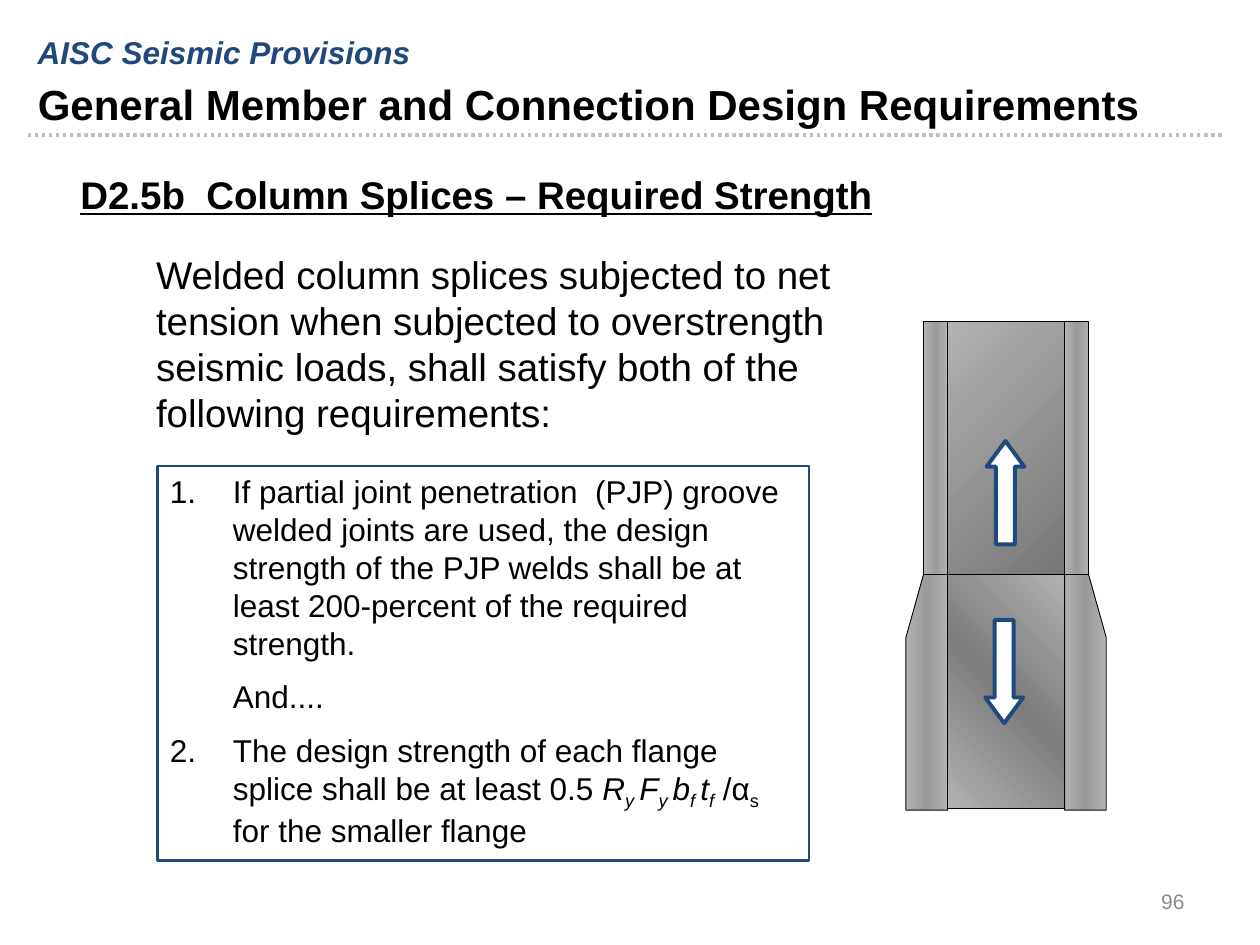
from lxml import etree
from pptx import Presentation
from pptx.dml.color import RGBColor
from pptx.enum.dml import MSO_LINE
from pptx.enum.shapes import MSO_CONNECTOR, MSO_SHAPE
from pptx.enum.text import MSO_ANCHOR, PP_ALIGN
from pptx.oxml.ns import qn
from pptx.util import Inches, Pt

LEFT, RIGHT = PP_ALIGN.LEFT, PP_ALIGN.RIGHT
TOP, MIDDLE = MSO_ANCHOR.TOP, MSO_ANCHOR.MIDDLE
RECT, ARROW = MSO_SHAPE.RECTANGLE, MSO_SHAPE.UP_ARROW
STRAIGHT, DOTS = MSO_CONNECTOR.STRAIGHT, MSO_LINE.ROUND_DOT

COLORS = {"ink": "000000", "navy": "1F497D", "white": "FFFFFF",
          "rule": "BFBFBF", "page": "8C8C8C", "light": "B2B2B2",
          "mid": "9A9A9A", "dark": "777777", "core": "7D7D7D"}

FLANGE = (("light", 0), ("mid", 50), ("light", 100))
UPPER = (("light", 0), ("dark", 100))
LOWER = (("light", 0), ("core", 50), ("light", 100))


def rgb(name):
    return RGBColor.from_string(COLORS[name])


def place(shape, box):
    shape.left, shape.top, shape.width, shape.height = map(Inches, box)


def add_run(para, text, size, color="ink", bold=None, italic=None,
            line=None, sub=False):
    run = para.add_run()
    run.text = text
    font = run.font
    font.name, font.size = "Arial", Pt(size)
    font.bold, font.italic, font.underline = bold, italic, line
    font.color.rgb = rgb(color)
    if sub:
        run._r.get_or_add_rPr().set("baseline", "-25000")


def set_frame(shape, anchor=TOP):
    frame = shape.text_frame
    frame.word_wrap = True
    frame.vertical_anchor = anchor
    return frame


def add_label(slide, box, text, size, align=LEFT, anchor=TOP, **style):
    shape = slide.shapes.add_textbox(*map(Inches, box))
    para = set_frame(shape, anchor).paragraphs[0]
    para.alignment = align
    add_run(para, text, size, **style)


def set_line(shape, color, width):
    shape.shadow.inherit = False
    shape.line.color.rgb = rgb(color)
    shape.line.width = Pt(width)


def shade(shape, stops, angle):
    """Give a steel part its gradient (clockwise angle) and thin outline."""
    set_line(shape, "ink", 0.5)
    shape.fill.gradient()
    grad = shape._element.spPr.find(qn("a:gradFill"))
    items = grad.find(qn("a:gsLst"))
    for old in list(items):
        items.remove(old)
    for color, pos in stops:
        stop = etree.SubElement(items, qn("a:gs"), pos=str(pos * 1000))
        etree.SubElement(stop, qn("a:srgbClr"), val=COLORS[color])
    grad.find(qn("a:lin")).set("ang", str(angle * 60000))


def add_plate(slide, box, stops, angle):
    shade(slide.shapes.add_shape(RECT, *map(Inches, box)), stops, angle)


def add_flare(slide, points):
    pts = [(Inches(x), Inches(y)) for x, y in points]
    build = slide.shapes.build_freeform(*pts[0])
    build.add_line_segments(pts[1:], close=True)
    shade(build.convert_to_shape(), FLANGE, 0)


def add_arrow(slide, left, top, down=False):
    shape = slide.shapes.add_shape(
        ARROW, Inches(left), Inches(top), Inches(0.3), Inches(0.82))
    shape.adjustments[0], shape.adjustments[1] = 0.5, 0.68
    shape.fill.solid()
    shape.fill.fore_color.rgb = rgb("white")
    set_line(shape, "navy", 2.25)
    if down:
        shape._element.spPr.get_or_add_xfrm().set("flipV", "1")


def add_rule(slide):
    rule = slide.shapes.add_connector(
        STRAIGHT, Inches(0.22), Inches(1.07), Inches(9.72), Inches(1.07))
    rule.line.color.rgb = rgb("rule")
    rule.line.width = Pt(2)
    rule.line.dash_style = DOTS
    etree.SubElement(rule._element.spPr, qn("a:effectLst"))


def add_item(para, start=None):
    """Hang the paragraph, numbered from start when one is given."""
    para.alignment = LEFT
    props = para._p.get_or_add_pPr()
    props.set("marL", str(Inches(0.5)))
    props.set("indent", str(Inches(-0.5)))
    if start:
        etree.SubElement(props, qn("a:buFont"), typeface="Arial")
        etree.SubElement(props, qn("a:buAutoNum"), type="arabicPeriod",
                         startAt=str(start))


def add_rules_box(slide):
    box = slide.shapes.add_shape(
        RECT, Inches(1.25), Inches(3.7), Inches(5.17), Inches(3.13))
    box.fill.background()
    set_line(box, "navy", 1.5)
    frame = set_frame(box)
    first = frame.paragraphs[0]
    also, last = frame.add_paragraph(), frame.add_paragraph()
    for para, start in ((first, 1), (also, None), (last, 2)):
        add_item(para, start)
    for para in (also, last):
        para.space_before = Pt(9)
    add_run(first, "If partial joint penetration  (PJP) groove welded joints "
            "are used, the design strength of the PJP welds shall be at "
            "least 200-percent of the required strength.", 18)
    add_run(also, "\tAnd....", 18)
    add_run(last, "The design strength of each flange splice shall be "
            "at least 0.5 ", 18)
    for sign, sub in (("R", "y "), ("F", "y "), ("b", "f "), ("t", "f")):
        add_run(last, sign, 18, italic=True)
        add_run(last, sub, 18, italic=True, sub=True)
    add_run(last, " /α", 18)
    add_run(last, "s", 18, sub=True)
    add_run(last, " for the smaller flange", 18)


def add_column(slide):
    left, right, wide, joint = 7.52, 8.45, 0.19, 4.56
    # Upper shaft
    add_plate(slide, (right, 2.55, wide, 2.02), FLANGE, 0)
    add_plate(slide, (left, 2.55, right - left, 2.02), UPPER, 45)
    add_plate(slide, (left - wide, 2.55, wide, 2.02), FLANGE, 0)
    # Lower shaft, with flanges that flare outward
    for inner, way in ((right, 1), (left, -1)):
        near, far = inner + way * wide, inner + way * 0.33
        add_flare(slide, ((inner, joint), (inner, 6.43), (far, 6.43),
                          (far, 5.06), (near, joint)))
    add_plate(slide, (left, joint, right - left, 1.86), LOWER, 315)
    # Pull on each side of the splice
    add_arrow(slide, 7.83, 3.5)
    add_arrow(slide, 7.82, 4.92, down=True)


def main():
    deck = Presentation()
    deck.slide_width, deck.slide_height = Inches(10), Inches(7.5)
    slide = deck.slides.add_slide(deck.slide_layouts[5])
    # Heading
    add_rule(slide)
    title = slide.shapes.title
    place(title, (0.2, 0.57, 8.98, 0.44))
    para = set_frame(title).paragraphs[0]
    para.alignment = LEFT
    add_run(para, "General Member and Connection Design Requirements", 24,
            bold=True)
    add_label(slide, (0.2, 0.21, 8.98, 0.31), "AISC Seismic Provisions", 18,
              color="navy", bold=True, italic=True)
    add_label(slide, (7.17, 6.95, 2.33, 0.4), "96", 12, RIGHT, MIDDLE,
              color="page")
    # Column splice
    add_column(slide)
    # Text
    add_rules_box(slide)
    add_label(slide, (1.14, 1.94, 5.62, 1.58),
              "Welded column splices subjected to net tension when subjected "
              "to overstrength seismic loads, shall satisfy both of the "
              "following requirements:", 22)
    add_label(slide, (0.54, 1.31, 7.73, 0.47),
              "D2.5b  Column Splices – Required Strength", 22, bold=True,
              line=True)
    deck.save("out.pptx")


if __name__ == "__main__":
    main()
